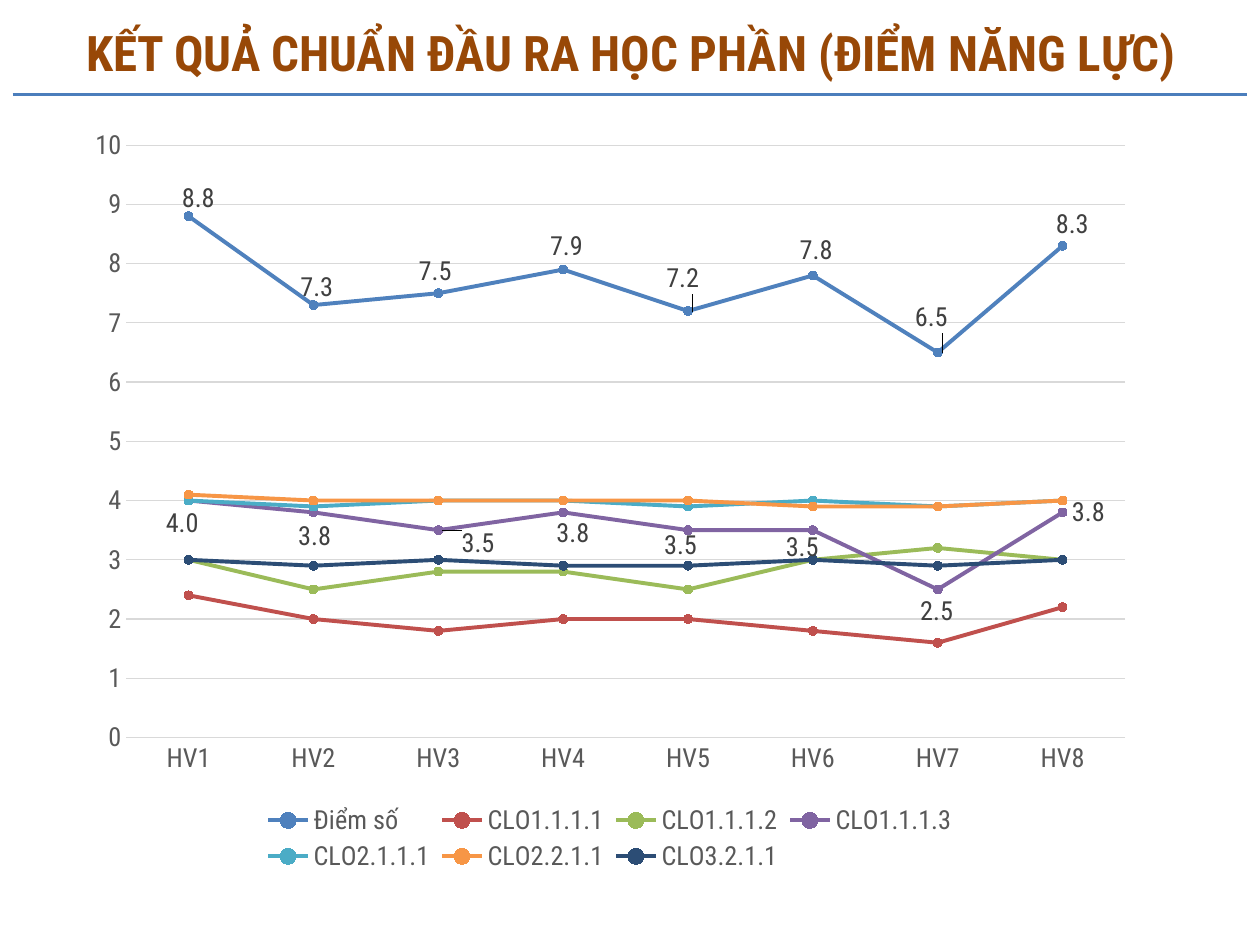
"""Build the slide of course learning outcome results."""
from dataclasses import dataclass

from lxml import etree
from pptx import Presentation
from pptx import util as u
from pptx.chart.data import CategoryChartData
from pptx.dml.color import RGBColor
from pptx.enum import chart as charts, shapes, text
from pptx.oxml import ns

FONT = "Roboto Condensed"
WIDTH, HEIGHT = u.Inches(10), u.Inches(7.5)
COLORS = {
    "title": "984807", "rule": "4B7EBC", "grid": "D9D9D9",
    "axis": "595959", "label": "404040", "base": "000000",
    "blue": "4F81BD", "red": "C0504D", "green": "9BBB59", "purple": "8064A2",
    "teal": "4BACC6", "orange": "F79646", "navy": "2C4D75",
}


@dataclass(frozen=True)
class Area:
    """A rectangle in percent of its parent."""
    left: float
    top: float
    width: float
    height: float

    def on_slide(self) -> tuple[int, int, int, int]:
        return (int(WIDTH * self.left / 100), int(HEIGHT * self.top / 100),
                int(WIDTH * self.width / 100), int(HEIGHT * self.height / 100))


@dataclass(frozen=True)
class Outcome:
    """One line of scores, with label offsets in percent of the chart."""
    name: str
    color: str
    scores: tuple[float, ...]
    offsets: tuple[tuple[float, float], ...] = ()


TITLE_AREA = Area(1.7, 1.07, 96.7, 8.93)
CHART_AREA = Area(5.8, 12.13, 85.2, 80.8)
PLOT_AREA = Area(4.95, 4, 93.05, 77.6)
LEGEND_AREA = Area(17, 89.8, 66, 10)
OUTCOMES = (
    Outcome("Điểm số", "blue", (8.8, 7.3, 7.5, 7.9, 7.2, 7.8, 6.5, 8.3),
            ((-1.5, -2.3), (-2.1, -2.3), (-2.7, -2.9), (-2.1, -3),
             (-2.9, -4.3), (-2.1, -3.3), (-3, -4.6), (-1.5, -2.8))),
    Outcome("CLO1.1.1.1", "red", (2.4, 2, 1.8, 2, 2, 1.8, 1.6, 2.2)),
    Outcome("CLO1.1.1.2", "green", (3, 2.5, 2.8, 2.8, 2.5, 3, 3.2, 3)),
    Outcome("CLO1.1.1.3", "purple", (4, 3.8, 3.5, 3.8, 3.5, 3.5, 2.5, 3.8),
            ((-3, 3), (-2.3, 3.1), (1.3, 1.7), (-1.5, 2.7),
             (-3.1, 2), (-3.4, 2.2), (-2.5, 2.9), (0, 0))),
    Outcome("CLO2.1.1.1", "teal", (4, 3.9, 4, 4, 3.9, 4, 3.9, 4)),
    Outcome("CLO2.2.1.1", "orange", (4.1, 4, 4, 4, 4, 3.9, 3.9, 4)),
    Outcome("CLO3.2.1.1", "navy", (3, 2.9, 3, 2.9, 2.9, 3, 2.9, 3)),
)


def rgb(name: str) -> RGBColor:
    return RGBColor.from_string(COLORS[name])


def style_font(font, size: float, color: str, bold: bool = False) -> None:
    font.name, font.size, font.bold = FONT, u.Pt(size), bold
    font.color.rgb = rgb(color)


def style_line(line, color: str, width: float) -> None:
    line.color.rgb = rgb(color)
    line.width = u.Pt(width)


def make_layout(**values: object):
    layout = etree.Element(ns.qn("c:layout"))
    manual = etree.SubElement(layout, ns.qn("c:manualLayout"))
    for tag, value in values.items():
        etree.SubElement(manual, ns.qn(f"c:{tag}")).set("val", str(value))
    return layout


def area_layout(area: Area, **target: str):
    return make_layout(**target, xMode="edge", yMode="edge",
                       x=area.left / 100, y=area.top / 100,
                       w=area.width / 100, h=area.height / 100)


def replace_layout(parent, layout, index: int) -> None:
    for old in parent.findall(ns.qn("c:layout")):
        parent.remove(old)
    parent.insert(index, layout)


def add_title(slide, content: str) -> None:
    shape = slide.shapes.add_textbox(*TITLE_AREA.on_slide())
    frame = shape.text_frame
    frame.word_wrap = True
    frame.vertical_anchor = text.MSO_ANCHOR.MIDDLE
    paragraph = frame.paragraphs[0]
    paragraph.alignment = text.PP_ALIGN.CENTER
    run = paragraph.add_run()
    run.text = content
    style_font(run.font, 28, "title", True)


def add_rule(slide) -> None:
    top = int(HEIGHT * 0.1)
    rule = slide.shapes.add_connector(
        shapes.MSO_CONNECTOR.STRAIGHT, int(WIDTH * 0.01), top, int(WIDTH * 0.99), top)
    style_line(rule.line, "rule", 2)
    etree.SubElement(rule._element.spPr, ns.qn("a:effectLst"))


def style_axes(chart) -> None:
    for axis in (chart.category_axis, chart.value_axis):
        axis.major_tick_mark = axis.minor_tick_mark = charts.XL_TICK_MARK.NONE
        style_font(axis.tick_labels.font, 15, "axis")
    style_line(chart.category_axis.format.line, "grid", 0.75)
    value_axis = chart.value_axis
    value_axis.minimum_scale, value_axis.maximum_scale = 0, 10
    value_axis.major_unit = 1
    value_axis.format.line.fill.background()
    style_line(value_axis.major_gridlines.format.line, "grid", 0.75)


def style_labels(series, outcome: Outcome) -> None:
    labels = series.data_labels
    labels.show_value = True
    labels.number_format, labels.number_format_is_linked = "0.0", False
    labels.position = charts.XL_LABEL_POSITION.RIGHT
    style_font(labels.font, 15, "label")
    for index in range(len(outcome.offsets)):
        label = series.points[index].data_label
        label.position = charts.XL_LABEL_POSITION.RIGHT
        style_font(label.font, 15, "label")
    elements = series._element.findall(f"{ns.qn('c:dLbls')}/{ns.qn('c:dLbl')}")
    for element, (x, y) in zip(elements, outcome.offsets):
        replace_layout(element, make_layout(x=x / 100, y=y / 100), 1)


def style_series(series, outcome: Outcome) -> None:
    series.smooth = False
    style_line(series.format.line, outcome.color, 2.25)
    marker = series.marker
    marker.style, marker.size = charts.XL_MARKER_STYLE.CIRCLE, 5
    marker.format.fill.solid()
    marker.format.fill.fore_color.rgb = rgb(outcome.color)
    style_line(marker.format.line, outcome.color, 0.75)
    if outcome.offsets:
        style_labels(series, outcome)


def add_outcome_chart(slide) -> None:
    data = CategoryChartData()
    data.categories = [f"HV{number}" for number in range(1, 9)]
    for outcome in OUTCOMES:
        data.add_series(outcome.name, outcome.scores)
    chart = slide.shapes.add_chart(
        charts.XL_CHART_TYPE.LINE_MARKERS, *CHART_AREA.on_slide(), data).chart
    style_font(chart.font, 10, "base")
    chart.has_title = False
    chart.plots[0].vary_by_categories = False
    style_axes(chart)
    for series, outcome in zip(chart.plots[0].series, OUTCOMES):
        style_series(series, outcome)
    chart.has_legend = True
    legend = chart.legend
    legend.position = charts.XL_LEGEND_POSITION.BOTTOM
    legend.include_in_layout = False
    style_font(legend.font, 15, "axis")
    replace_layout(legend._element, area_layout(LEGEND_AREA), 1)
    plot_area = chart._chartSpace.chart.plotArea
    replace_layout(plot_area, area_layout(PLOT_AREA, layoutTarget="inner"), 0)


def main() -> None:
    presentation = Presentation()
    presentation.slide_width, presentation.slide_height = WIDTH, HEIGHT
    slide = presentation.slides.add_slide(presentation.slide_layouts[6])
    add_rule(slide)
    add_title(slide, "KẾT QUẢ CHUẨN ĐẦU RA HỌC PHẦN (ĐIỂM NĂNG LỰC)")
    add_outcome_chart(slide)
    presentation.save("out.pptx")


if __name__ == "__main__":
    main()
